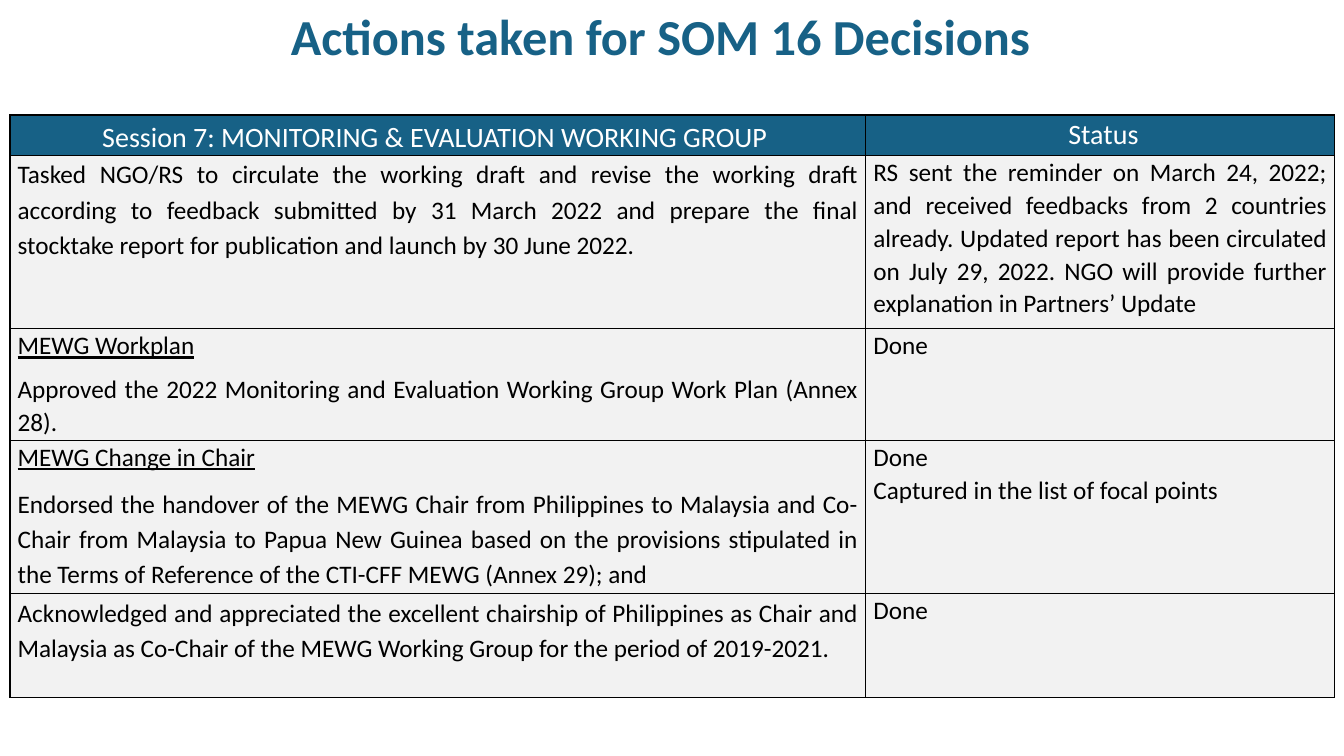
from lxml.etree import SubElement
from pptx import Presentation
from pptx.dml.color import RGBColor
from pptx.enum.text import MSO_ANCHOR, MSO_AUTO_SIZE, PP_ALIGN
from pptx.oxml.ns import qn
from pptx.util import Pt

BLUE = RGBColor(0x17, 0x61, 0x86)
GREY = RGBColor(0xF2, 0xF2, 0xF2)
WHITE = RGBColor(0xFF, 0xFF, 0xFF)
BLACK = RGBColor(0x00, 0x00, 0x00)
FONT = "Calibri"
TIGHT, LOOSE = 1.07, 1.15

COLUMN_WIDTHS = [611.3, 334.8]
ROW_HEIGHTS = [28.8, 123.8, 79.9, 109.4, 74.2]

# Header cells: text and line spacing
HEADERS = [("Session 7: MONITORING & EVALUATION WORKING GROUP ", LOOSE), (" Status", 1.0)]

# Each row: heading, decision, line spacing of the decision, status paragraphs
DECISIONS = [
    (None,
     "Tasked NGO/RS to circulate the working draft and revise the working draft "
     "according to feedback submitted by 31 March 2022 and prepare the final "
     "stocktake report for publication and launch by 30 June 2022.",
     LOOSE,
     ["RS sent the reminder on March 24, 2022; and received feedbacks from 2 countries "
      "already. Updated report has been circulated on July 29, 2022. NGO will provide "
      "further explanation in Partners’ Update"]),
    ("MEWG Workplan",
     "Approved the 2022 Monitoring and Evaluation Working Group Work Plan (Annex 28).",
     TIGHT,
     ["Done"]),
    ("MEWG Change in Chair",
     "Endorsed the handover of the MEWG Chair from Philippines to Malaysia and Co-Chair "
     "from Malaysia to Papua New Guinea based on the provisions stipulated in the Terms "
     "of Reference of the CTI-CFF MEWG (Annex 29); and",
     LOOSE,
     ["Done", "Captured in the list of focal points"]),
    (None,
     "Acknowledged and appreciated the excellent chairship of Philippines as Chair and "
     "Malaysia as Co-Chair of the MEWG Working Group for the period of 2019-2021.",
     LOOSE,
     ["Done"]),
]


def set_font(paragraph, size, color, bold=False):
    font = paragraph.font
    font.name, font.size, font.bold = FONT, Pt(size), bold
    font.color.rgb = color


def format_title(title, text):
    title.left, title.top, title.width, title.height = Pt(24), Pt(0), Pt(896), Pt(51)
    frame = title.text_frame
    frame.text = text
    frame.auto_size = MSO_AUTO_SIZE.NONE
    frame.vertical_anchor = MSO_ANCHOR.MIDDLE
    paragraph = frame.paragraphs[0]
    paragraph.alignment = PP_ALIGN.CENTER
    set_font(paragraph, 36, BLUE, bold=True)


def add_borders(cell):
    """Draw a black one-point line on all four sides, ahead of the cell fill."""
    properties = cell._tc.get_or_add_tcPr()
    for index, side in enumerate(("a:lnL", "a:lnR", "a:lnT", "a:lnB")):
        line = SubElement(properties, qn(side), w=str(Pt(1)))
        fill = SubElement(line, qn("a:solidFill"))
        SubElement(fill, qn("a:srgbClr"), val=str(BLACK))
        properties.insert(index, line)


def format_cell(cell, fill, side_margin, anchor):
    cell.fill.solid()
    cell.fill.fore_color.rgb = fill
    cell.margin_left = cell.margin_right = Pt(side_margin)
    cell.margin_top = cell.margin_bottom = Pt(0)
    cell.vertical_anchor = anchor
    add_borders(cell)


def fill_header(cell, text, spacing):
    format_cell(cell, BLUE, 14.4, MSO_ANCHOR.MIDDLE)
    cell.text = text
    paragraph = cell.text_frame.paragraphs[0]
    paragraph.alignment = PP_ALIGN.CENTER
    paragraph.line_spacing = spacing
    set_font(paragraph, 20, WHITE)


def fill_body(cell, lines):
    """Write (text, line spacing) pairs as justified paragraphs."""
    format_cell(cell, GREY, 5.4, MSO_ANCHOR.TOP)
    cell.text = "\n".join(text for text, _ in lines)
    for paragraph, (_, spacing) in zip(cell.text_frame.paragraphs, lines):
        paragraph.alignment = PP_ALIGN.JUSTIFY
        paragraph.line_spacing = spacing
        set_font(paragraph, 18, BLACK)


def fill_decision(cell, heading, decision, spacing):
    if heading is None:
        fill_body(cell, [(decision, spacing)])
        return
    fill_body(cell, [(heading, TIGHT), (decision, spacing)])
    heading_paragraph, decision_paragraph = cell.text_frame.paragraphs
    heading_paragraph.runs[0].font.underline = True
    decision_paragraph.space_before = Pt(8)


def add_decision_table(slide):
    table = slide.shapes.add_table(
        len(ROW_HEIGHTS), len(COLUMN_WIDTHS), Pt(7.2), Pt(82.1),
        Pt(sum(COLUMN_WIDTHS)), Pt(sum(ROW_HEIGHTS))).table
    table.horz_banding = False
    for column, width in zip(table.columns, COLUMN_WIDTHS):
        column.width = Pt(width)
    for row, height in zip(table.rows, ROW_HEIGHTS):
        row.height = Pt(height)

    # Header row
    for index, (text, spacing) in enumerate(HEADERS):
        fill_header(table.cell(0, index), text, spacing)

    # Decisions and their status
    for index, (heading, decision, spacing, status) in enumerate(DECISIONS, start=1):
        fill_decision(table.cell(index, 0), heading, decision, spacing)
        fill_body(table.cell(index, 1), [(text, TIGHT) for text in status])


def main():
    presentation = Presentation()
    presentation.slide_width, presentation.slide_height = Pt(960), Pt(540)
    slide = presentation.slides.add_slide(presentation.slide_layouts.get_by_name("Title Only"))
    format_title(slide.shapes.title, "Actions taken for SOM 16 Decisions")
    add_decision_table(slide)
    presentation.save("out.pptx")


if __name__ == "__main__":
    main()
